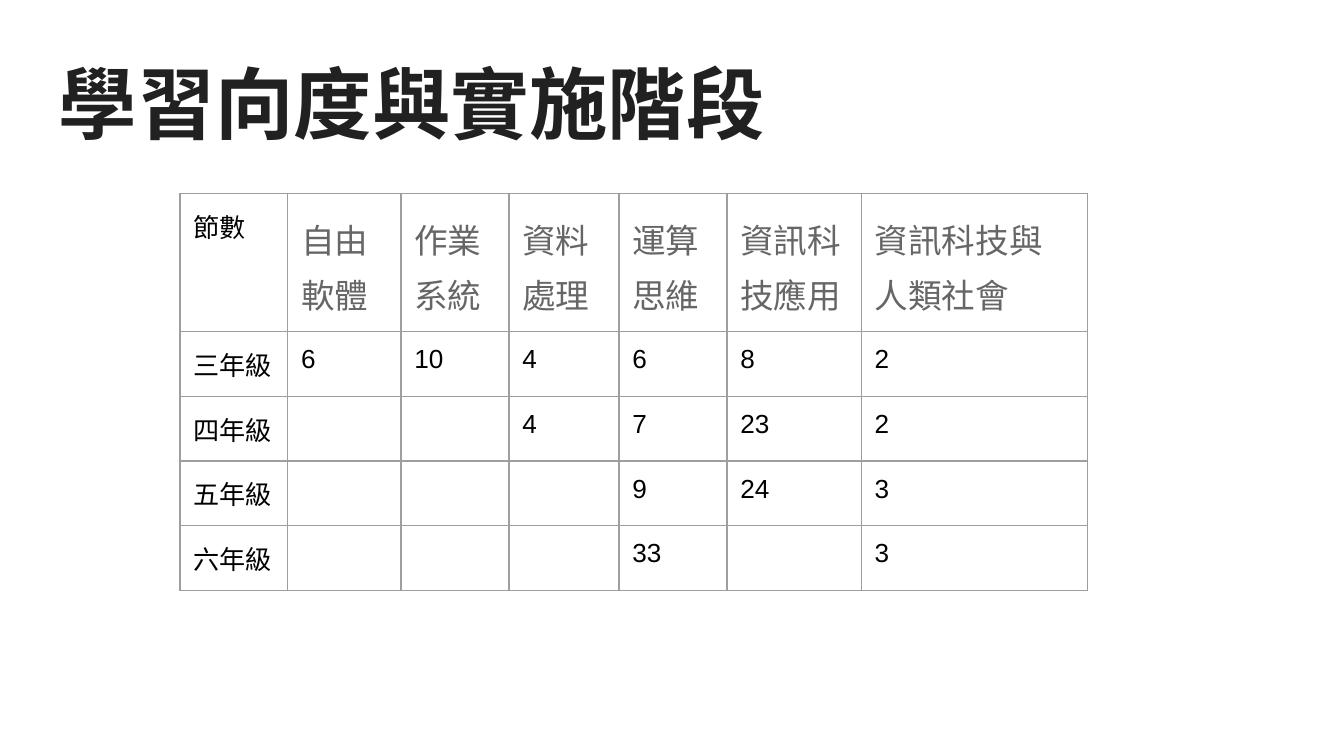
from lxml.etree import SubElement
from pptx import Presentation
from pptx.dml.color import RGBColor as RGB
from pptx.enum.text import MSO_ANCHOR as Anchor, MSO_AUTO_SIZE as AutoSize, PP_ALIGN as Align
from pptx.oxml.ns import qn
from pptx.util import Cm, Pt

COLORS = {"title": "212121", "head": "666666", "text": "000000", "border": "9E9E9E"}
COL_WIDTHS = [2.04, 2.14, 2.04, 2.08, 2.04, 2.54, 4.27]
ROW_HEIGHT = 1.22
LESSONS = [
    ["節數", "自由軟體", "作業系統", "資料處理", "運算思維", "資訊科技應用", "資訊科技與人類社會"],
    ["三年級", "6", "10", "4", "6", "8", "2"],
    ["四年級", "", "", "4", "7", "23", "2"],
    ["五年級", "", "", "", "9", "24", "3"],
    ["六年級", "", "", "", "33", "", "3"],
]


class SlideBuilder:
    """Holds the style and the slide being built."""

    def __init__(self, prs):
        self.slide = prs.slides.add_slide(prs.slide_layouts[5])
        self.inset = Cm(0.25)

    def run(self, p, text, size, color, font="Arial", bold=False):
        r = p.add_run()
        r.text = text
        r.font.size, r.font.name, r.font.bold = Pt(size), font, bold
        r.font.color.rgb = RGB.from_string(COLORS[color])

    def margins(self, box):
        box.margin_left = box.margin_right = self.inset
        box.margin_top = box.margin_bottom = self.inset

    def title(self, text, x, y, w, h):
        sp = self.slide.shapes.title
        sp.left, sp.top, sp.width, sp.height = Cm(x), Cm(y), Cm(w), Cm(h)
        tf = sp.text_frame
        tf.auto_size, tf.word_wrap = AutoSize.NONE, True
        tf.vertical_anchor = Anchor.MIDDLE
        self.margins(tf)
        p = tf.paragraphs[0]
        p.alignment = Align.LEFT
        self.run(p, text, 42, "title", bold=True)

    def borders(self, cell):
        tc_pr = cell._tc.get_or_add_tcPr()
        for side in ("lnL", "lnR", "lnT", "lnB"):
            ln = SubElement(tc_pr, qn(f"a:{side}"), w=str(Pt(0.75)))
            fill = SubElement(ln, qn("a:solidFill"))
            SubElement(fill, qn("a:srgbClr"), val=COLORS["border"])

    def cell(self, cell, text, heading):
        self.margins(cell)
        self.borders(cell)
        cell.fill.background()
        p = cell.text_frame.paragraphs[0]
        if heading:
            p.line_spacing, p.space_after = 1.15, Pt(16)
            self.run(p, text, 18, "head", "Noto Sans Mono")
        else:
            self.run(p, text, 14, "text")

    def table(self, rows, x, y, widths, row_height):
        size = Cm(sum(widths)), Cm(row_height * len(rows))
        frame = self.slide.shapes.add_table(len(rows), len(widths), Cm(x), Cm(y), *size)
        tbl = frame.table
        tbl.first_row = tbl.horz_banding = False
        for col, width in zip(tbl.columns, widths):
            col.width = Cm(width)
        for i, row in enumerate(rows):
            tbl.rows[i].height = Cm(row_height)
            for j, text in enumerate(row):
                self.cell(tbl.cell(i, j), text, heading=i == 0 and j > 0)


def main():
    prs = Presentation()
    prs.slide_width, prs.slide_height = Cm(25.4), Cm(14.29)
    s = SlideBuilder(prs)
    s.title("學習向度與實施階段", 0.86, 0.81, 23.67, 2.24)
    s.table(LESSONS, 3.4, 3.66, COL_WIDTHS, ROW_HEIGHT)
    prs.save("out.pptx")


if __name__ == "__main__":
    main()
